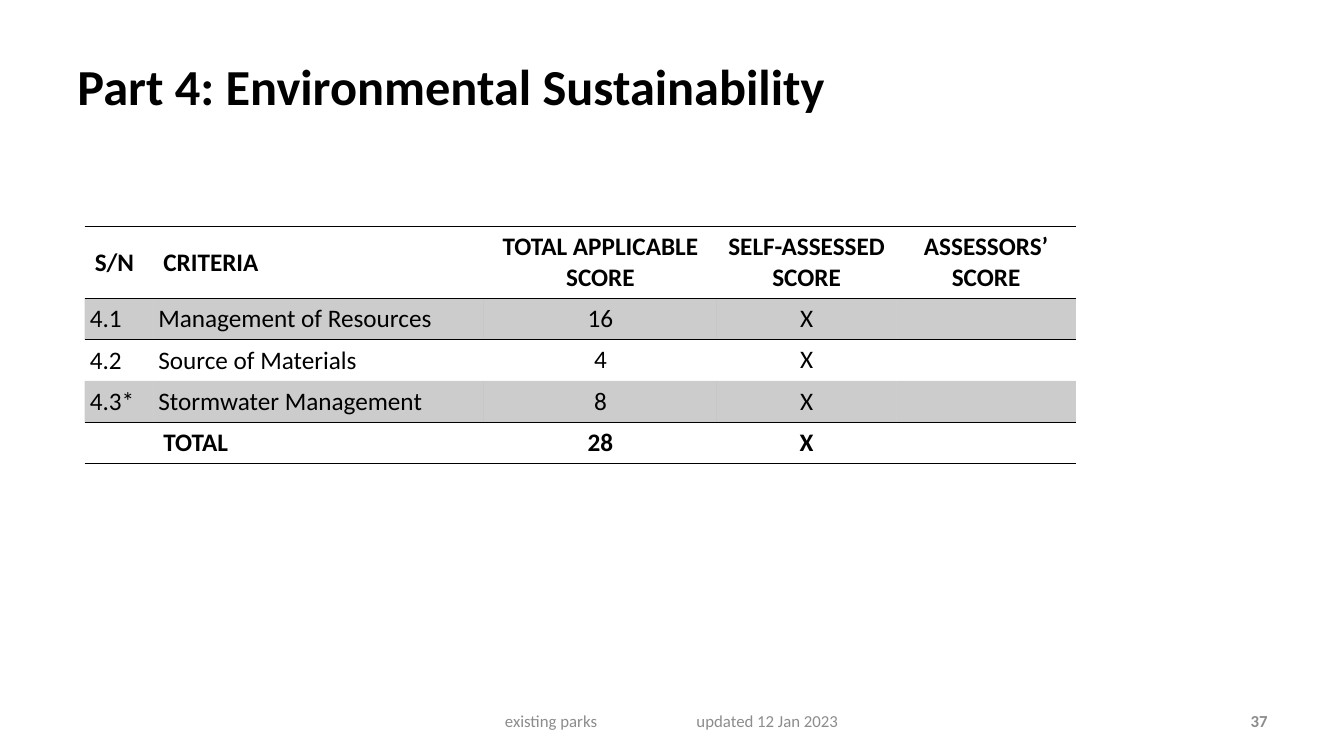
from lxml import etree
from pptx import Presentation
from pptx.dml.color import RGBColor
from pptx.enum.text import MSO_ANCHOR, PP_ALIGN
from pptx.oxml.ns import qn
from pptx.util import Inches, Pt

LEFT, CENTER, RIGHT = PP_ALIGN.LEFT, PP_ALIGN.CENTER, PP_ALIGN.RIGHT
MIDDLE, BOTTOM = MSO_ANCHOR.MIDDLE, MSO_ANCHOR.BOTTOM
BLACK = RGBColor(0x00, 0x00, 0x00)
GREY = RGBColor(0x8C, 0x8C, 0x8C)
FONT = "Calibri"
NO_STYLE = "{2D5ABB26-0587-4C30-8999-92F81FD0307C}"
BAND_OPACITY = 20

COLUMN_WIDTHS = [0.68, 3.28, 2.31, 1.78, 1.78]
HEADER_HEIGHT, ROW_HEIGHT = 0.71, 0.41
SCORES = [
    ["S/N", "CRITERIA", "TOTAL APPLICABLE SCORE", "SELF-ASSESSED SCORE", "ASSESSORS’ SCORE"],
    ["4.1", "Management of Resources", "16", "X", ""],
    ["4.2", "Source of Materials", "4", "X", ""],
    ["4.3*", "Stormwater Management", "8", "X", ""],
    ["", "TOTAL", "28", "X", ""],
]


def style_paragraph(paragraph, size, color, bold, alignment):
    paragraph.alignment = alignment
    font = paragraph.font
    font.name, font.size, font.bold = FONT, Pt(size), bold
    font.color.rgb = color


def add_text(slide, box, text, size, color, bold=False, alignment=LEFT, tab=None):
    shape = slide.shapes.add_textbox(*(Inches(length) for length in box))
    frame = shape.text_frame
    frame.word_wrap = True
    frame.vertical_anchor = MIDDLE
    paragraph = frame.paragraphs[0]
    paragraph.text = text
    if tab:
        tabs = etree.SubElement(paragraph._p.get_or_add_pPr(), qn("a:tabLst"))
        etree.SubElement(tabs, qn("a:tab"), pos=str(Inches(tab)), algn="l")
    style_paragraph(paragraph, size, color, bold, alignment)


def fill_band(cell):
    cell.fill.solid()
    cell.fill.fore_color.rgb = BLACK
    color = cell._tc.tcPr.find(qn("a:solidFill"))[0]
    etree.SubElement(color, qn("a:alpha"), val=str(BAND_OPACITY * 1000))


def add_rules(cell, sides):
    properties = cell._tc.get_or_add_tcPr()
    for index, side in enumerate(sides):
        line = etree.Element(qn("a:" + side), w=str(Pt(1)))
        fill = etree.SubElement(line, qn("a:solidFill"))
        etree.SubElement(fill, qn("a:srgbClr"), val=str(BLACK))
        properties.insert(index, line)


def add_score_table(slide, left, top):
    last = len(SCORES) - 1
    height = HEADER_HEIGHT + last * ROW_HEIGHT
    frame = slide.shapes.add_table(
        len(SCORES), len(COLUMN_WIDTHS), Inches(left), Inches(top),
        Inches(sum(COLUMN_WIDTHS)), Inches(height))
    table = frame.table
    table.first_row = table.horz_banding = False
    table._tbl.tblPr.find(qn("a:tableStyleId")).text = NO_STYLE
    for column, width in zip(table.columns, COLUMN_WIDTHS):
        column.width = Inches(width)
    for row_index, values in enumerate(SCORES):
        outer = row_index in (0, last)
        table.rows[row_index].height = Inches(ROW_HEIGHT if row_index else HEADER_HEIGHT)
        for column_index, value in enumerate(values):
            cell = table.cell(row_index, column_index)
            label = column_index < 2
            cell.text = value
            cell.vertical_anchor = BOTTOM if label and not outer else MIDDLE
            if label and not outer:
                cell.margin_left = cell.margin_right = Inches(0.05)
            style_paragraph(cell.text_frame.paragraphs[0], 18, BLACK, outer,
                            LEFT if label else CENTER)
            if row_index % 2:
                fill_band(cell)
            else:
                cell.fill.background()
            if outer:
                add_rules(cell, ["lnT", "lnB"])
            elif row_index == 1:
                add_rules(cell, ["lnT"])
            elif row_index == last - 1:
                add_rules(cell, ["lnB"])


def add_footer(slide, top, height):
    add_text(slide, (4.91, top, 3.87, height), "existing parks\tupdated 12 Jan 2023",
             12, GREY, tab=1.9)
    add_text(slide, (9.56, top, 3.11, height), "37", 12, GREY, True, RIGHT)


def main():
    presentation = Presentation()
    presentation.slide_width, presentation.slide_height = Inches(13.33), Inches(7.5)
    slide = presentation.slides.add_slide(presentation.slide_layouts[6])
    add_text(slide, (0.67, 0.3, 10.36, 1.09), "Part 4: Environmental Sustainability",
             36, BLACK, True)
    add_score_table(slide, 0.84, 2.25)
    add_footer(slide, 6.95, 0.4)
    presentation.save("out.pptx")


if __name__ == "__main__":
    main()
